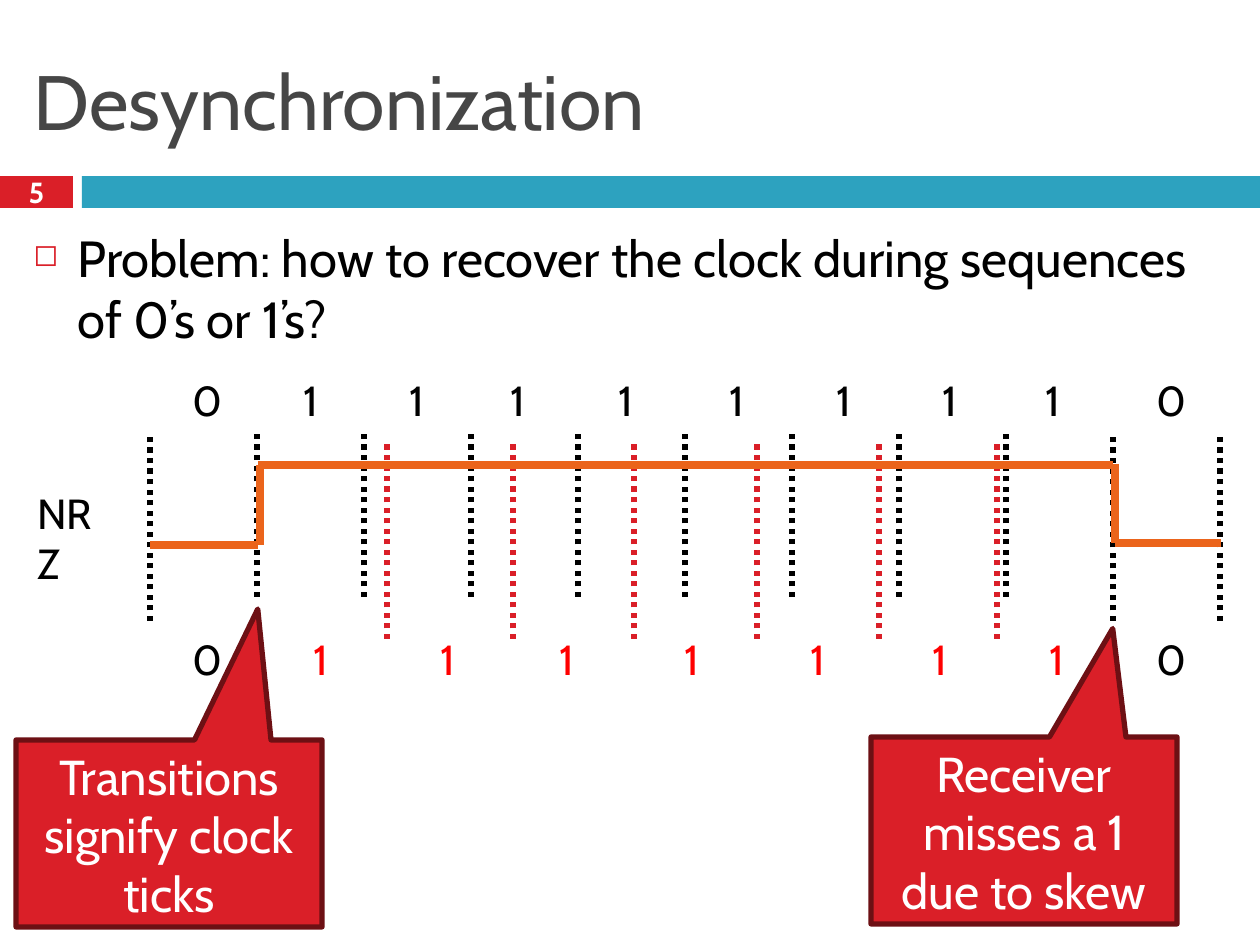
from lxml.etree import SubElement
from pptx import Presentation
from pptx.dml.color import RGBColor
from pptx.enum.dml import MSO_LINE
from pptx.enum.shapes import MSO_CONNECTOR, MSO_SHAPE
from pptx.enum.text import MSO_ANCHOR, PP_ALIGN
from pptx.oxml.ns import qn
from pptx.util import Emu, Pt

# Content, lengths in px
TITLE = "Desynchronization"
NUMBER = "5"
PROBLEM = "Problem: how to recover the clock during sequences of 0’s or 1’s?"
SENT = [("0", 180), ("1", 291), ("1", 397), ("1", 498), ("1", 606),
        ("1", 717), ("1", 824), ("1", 930), ("1", 1033), ("0", 1144)]
READ = [("0", 180), ("1", 301), ("1", 428), ("1", 547), ("1", 672),
        ("1", 798), ("1", 920), ("1", 1037), ("0", 1144)]
SKEWED = [387, 513, 634, 757, 879, 997]
SIGNAL = [(150, 545, 258, 545), (260, 545, 260, 465), (258, 465, 1113, 465),
          (1115, 464, 1115, 543), (1115, 543, 1221, 543)]
NOTES = [("Transitions signify clock ticks", 16, 740, -1.2),
         ("Receiver misses a 1 due to skew", 871, 737, -1.08)]
START, STEP, TICKS = 150, 107, 11
LONG = (0, 9, 10)

FONT = "Cabin"
BLACK = RGBColor(0, 0, 0)
WHITE = RGBColor(255, 255, 255)
GRAY = RGBColor(0x46, 0x46, 0x46)
RED = RGBColor(0xDA, 0x1F, 0x28)
BRIGHT = RGBColor(0xFF, 0, 0)
DARK = RGBColor(0x6D, 0x10, 0x14)
TEAL = RGBColor(0x2D, 0xA2, 0xBF)
ORANGE = RGBColor(0xEB, 0x64, 0x1B)


def px(*sizes):
    return [Emu(round(size * 914400 / 126)) for size in sizes]


deck = Presentation()
deck.slide_width, deck.slide_height = px(1260, 945)
slide = deck.slides.add_slide(deck.slide_layouts[5])
shapes = slide.shapes


def write(shape, text, size, color, align=PP_ALIGN.LEFT, anchor=MSO_ANCHOR.TOP):
    frame = shape.text_frame
    frame.word_wrap = True
    frame.vertical_anchor = anchor
    frame.text = text
    par = frame.paragraphs[0]
    par.alignment = align
    par.font.name, par.font.size = FONT, Pt(size)
    par.font.color.rgb = color
    return par


def label(text, box, size, color):
    return write(shapes.add_textbox(*px(*box)), text, size, color)


def block(kind, box, fill):
    shape = shapes.add_shape(kind, *px(*box))
    shape.shadow.inherit = False
    shape.fill.solid()
    shape.fill.fore_color.rgb = fill
    shape.line.fill.background()
    return shape


def stroke(ends, color, width, dash=None):
    line = shapes.add_connector(MSO_CONNECTOR.STRAIGHT, *px(*ends))
    line.line.color.rgb = color
    line.line.width = Pt(width)
    if dash:
        line.line.dash_style = dash
    SubElement(line._element.spPr, qn("a:effectLst"))


# Title and band
title = shapes.title
title.left, title.top, title.width, title.height = px(21, 32, 1218, 136)
write(title, TITLE, 44, GRAY, anchor=MSO_ANCHOR.MIDDLE)
tab = block(MSO_SHAPE.RECTANGLE, (0, 176, 73, 32), RED)
par = write(tab, NUMBER, 16.6, WHITE, PP_ALIGN.CENTER, MSO_ANCHOR.MIDDLE)
par.font.bold = True
tab.text_frame.margin_top = tab.text_frame.margin_bottom = 0
block(MSO_SHAPE.RECTANGLE, (82, 176, 1178, 32), TEAL)

# Problem bullet
par = label(PROBLEM, (21, 221, 1218, 130), 29, BLACK)
par.space_before = Pt(7)
props = par._p.get_or_add_pPr()
indent, = px(44)
props.set("marL", str(indent))
props.set("indent", str(-indent))
tint = SubElement(props, qn("a:buClr"))
SubElement(tint, qn("a:srgbClr"), val=str(RED))
SubElement(props, qn("a:buSzPct"), val="60000")
SubElement(props, qn("a:buChar"), char="◻")

# Skewed and true clock ticks
for x in SKEWED:
    stroke((x, 639, x, 444), RED, 3, MSO_LINE.ROUND_DOT)
for i in range(TICKS):
    x = START + i * STEP
    stroke((x, 621 if i in LONG else 597, x, 432), BLACK, 3, MSO_LINE.ROUND_DOT)

# Signal
label("NRZ", (25, 481, 96, 113), 24, BLACK)
for ends in SIGNAL:
    stroke(ends, ORANGE, 4.5)

# Callouts
for text, x, y, tip in NOTES:
    note = block(MSO_SHAPE.RECTANGULAR_CALLOUT, (x, y, 306, 187), RED)
    note.adjustments[0], note.adjustments[1] = 0.29, tip
    note.line.color.rgb = DARK
    note.line.width = Pt(3)
    write(note, text, 28, WHITE, PP_ALIGN.CENTER)

# Bits sent above, bits read below
for bits, y, one in ((SENT, 368, BLACK), (READ, 627, BRIGHT)):
    for bit, x in bits:
        label(bit, (x, y, 49, 63), 24, one if bit == "1" else BLACK)

deck.save("out.pptx")
